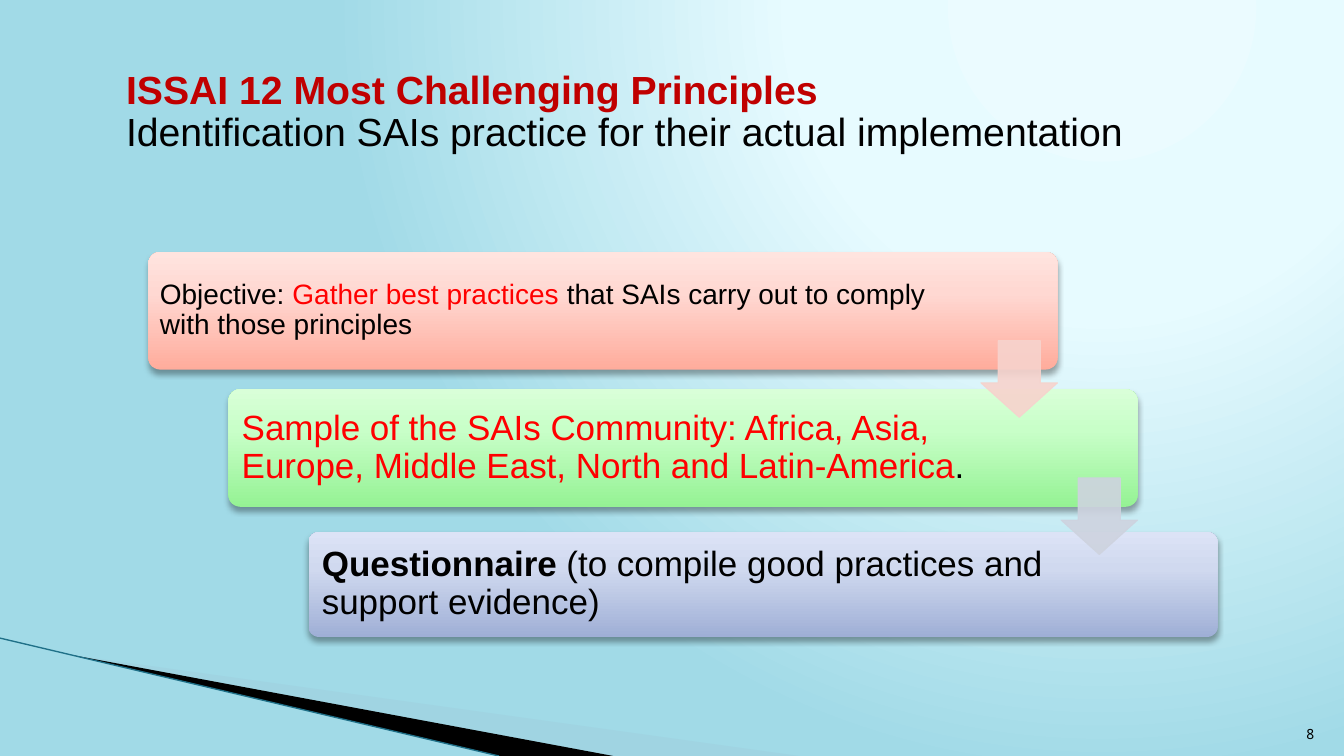
"""Build the slide on the most challenging ISSAI 12 principles."""
from dataclasses import dataclass
from typing import Optional

import pptx
import pptx.dml.color
import pptx.enum.shapes
import pptx.enum.text
import pptx.oxml
import pptx.oxml.ns
import pptx.util

Pt = pptx.util.Pt
Anchor = pptx.enum.text.MSO_ANCHOR
Align = pptx.enum.text.PP_ALIGN
Preset = pptx.enum.shapes.MSO_SHAPE


@dataclass(frozen=True)
class Theme:
    font: str = "Arial"
    number_font: str = "Noto Sans Mono"
    title_size: float = 28
    objective_size: float = 20
    step_size: float = 25
    number_size: float = 10
    ink: str = "000000"
    heading: str = "C00000"
    accent: str = "FF0000"
    swoosh: str = "A0CBDC"
    swoosh_edge: str = "1F7088"
    background: tuple = ((0, "EBFBFF"), (40, "E7FBFF"), (100, "A1DAE7"))
    coral: tuple = ((0, "FFAC9C"), (65, "FFD8D2"), (100, "FFE4DF"))
    green: tuple = ((0, "95F294"), (65, "C8FFC8"), (100, "D9FFD8"))
    blue: tuple = ((0, "9FAFD6"), (65, "D0D9EF"), (100, "DCE3F6"))
    coral_arrow: str = "F7D3CD"
    blue_arrow: str = "CED3DF"


THEME = Theme()


@dataclass(frozen=True)
class Span:
    text: str
    color: str = THEME.ink
    bold: bool = False


@dataclass(frozen=True)
class Step:
    spans: tuple
    gradient: tuple
    top: float
    height: float
    text_width: float
    size: float = THEME.step_size
    inset: float = 7.2
    arrow: Optional[str] = None


@dataclass(frozen=True)
class Swoosh:
    points: tuple
    color: str
    opacity: int = 100


STEPS = (
    Step((Span("Objective: "), Span("Gather best practices ", THEME.accent),
          Span("that SAIs carry out to comply with those principles")),
         THEME.coral, 180, 84, 558.7, THEME.objective_size, 5.8, THEME.coral_arrow),
    Step((Span("Sample of the SAIs Community: Africa, Asia, Europe, Middle East, "
               "North and Latin-America", THEME.accent), Span(".")),
         THEME.green, 278, 84, 532.8, arrow=THEME.blue_arrow),
    Step((Span("Questionnaire ", bold=True),
          Span("(to compile good practices and support evidence)")),
         THEME.blue, 380, 75, 533.5),
)
SWOOSHES = (
    Swoosh(((52.5, 468.4), (571, 540), (438, 540)), THEME.swoosh, 40),
    Swoosh(((51.5, 467.6), (438.5, 540), (357, 540)), THEME.ink),
)
STEP_LEFT, STEP_SHIFT, STEP_WIDTH = 106, 57.2, 649.4
TEXT_MARGIN = 2.4
ARROW_DROP, ARROW_SIZE = 63.4, 54.7
LINEAR_UP = '<a:lin ang="16200000" scaled="0"/>'
FROM_TOP_RIGHT = '<a:path path="circle"><a:fillToRect l="65000" t="0" r="0" b="98000"/></a:path>'
SHADOW = ('<a:outerShdw {} blurRad="50800" dist="38100" dir="5400000" rotWithShape="0">'
          '<a:srgbClr val="000000"><a:alpha val="35000"/></a:srgbClr></a:outerShdw>')


def rgb(color: str) -> pptx.dml.color.RGBColor:
    return pptx.dml.color.RGBColor.from_string(color)


def apply_gradient(properties, stops: tuple, direction: str) -> None:
    colors = "".join(f'<a:gs pos="{position * 1000}"><a:srgbClr val="{color}"/></a:gs>'
                     for position, color in stops)
    gradient = pptx.oxml.parse_xml(
        f'<a:gradFill {pptx.oxml.ns.nsdecls("a")} rotWithShape="1">'
        f'<a:gsLst>{colors}</a:gsLst>{direction}</a:gradFill>')
    solid = properties.find(pptx.oxml.ns.qn("a:solidFill"))
    properties.replace(solid, gradient)


def apply_solid(fill, color: str) -> None:
    fill.solid()
    fill.fore_color.rgb = rgb(color)


def apply_opacity(shape, percent: int) -> None:
    for color in shape.element.spPr.iter(pptx.oxml.ns.qn("a:srgbClr")):
        color.append(pptx.oxml.parse_xml(
            f'<a:alpha {pptx.oxml.ns.nsdecls("a")} val="{percent * 1000}"/>'))


def add_text(slide, spans: tuple, *, left: float, top: float, width: float, height: float,
             size: float, font: str = THEME.font, inset: tuple = (7.2, 3.6),
             anchor=Anchor.MIDDLE, align=Align.LEFT, line_spacing: float = 0.9) -> None:
    box = slide.shapes.add_textbox(Pt(left), Pt(top), Pt(width), Pt(height))
    frame = box.text_frame
    frame.word_wrap = True
    frame.vertical_anchor = anchor
    frame.margin_left = frame.margin_right = Pt(inset[0])
    frame.margin_top = frame.margin_bottom = Pt(inset[1])
    paragraph = frame.paragraphs[0]
    paragraph.alignment = align
    paragraph.line_spacing = line_spacing
    for index, span in enumerate(spans):
        run = paragraph.add_run()
        run.text = span.text.rstrip("\n")
        run.font.name = font
        run.font.size = Pt(size)
        run.font.bold = span.bold
        run.font.color.rgb = rgb(span.color)
        if span.text.endswith("\n"):
            paragraph.add_line_break()


def add_swoosh(slide, swoosh: Swoosh) -> None:
    start, *rest = swoosh.points
    builder = slide.shapes.build_freeform(*start, scale=Pt(1))
    builder.add_line_segments(rest, close=True)
    shape = builder.convert_to_shape()
    shape.shadow.inherit = False
    apply_solid(shape.fill, swoosh.color)
    shape.line.fill.background()
    apply_opacity(shape, swoosh.opacity)


def add_swoosh_edge(slide) -> None:
    edge = slide.shapes.add_connector(
        pptx.enum.shapes.MSO_CONNECTOR.STRAIGHT, Pt(0), Pt(455.8), Pt(356.4), Pt(540))
    edge.line.color.rgb = rgb(THEME.swoosh_edge)
    edge.line.width = Pt(0.95)
    edge.element.spPr.append(
        pptx.oxml.parse_xml(f'<a:effectLst {pptx.oxml.ns.nsdecls("a")}/>'))


def add_step(slide, step: Step, left: float) -> None:
    bar = slide.shapes.add_shape(Preset.ROUNDED_RECTANGLE, Pt(left), Pt(step.top),
                                 Pt(STEP_WIDTH), Pt(step.height))
    bar.adjustments[0] = 0.1
    bar.shadow.inherit = False
    bar.fill.solid()
    apply_gradient(bar.element.spPr, step.gradient, LINEAR_UP)
    bar.line.fill.background()
    effects = bar.element.spPr.find(pptx.oxml.ns.qn("a:effectLst"))
    effects.append(pptx.oxml.parse_xml(SHADOW.format(pptx.oxml.ns.nsdecls("a"))))
    add_text(slide, step.spans, left=left + TEXT_MARGIN, top=step.top + TEXT_MARGIN,
             width=step.text_width, height=step.height - 2 * TEXT_MARGIN,
             size=step.size, inset=(step.inset, step.inset))


def add_arrow(slide, color: str, left: float, top: float) -> None:
    arrow = slide.shapes.add_shape(Preset.DOWN_ARROW, Pt(left), Pt(top),
                                   Pt(ARROW_SIZE), Pt(ARROW_SIZE))
    arrow.adjustments[0], arrow.adjustments[1] = 0.55, 0.45
    arrow.shadow.inherit = False
    apply_solid(arrow.fill, color)
    apply_solid(arrow.line.fill, color)
    arrow.line.width = Pt(0.75)
    apply_opacity(arrow, 90)


def main() -> None:
    deck = pptx.Presentation()
    deck.slide_width, deck.slide_height = Pt(960), Pt(540)
    slide = deck.slides.add_slide(deck.slide_layouts[6])
    slide.background.fill.solid()
    background = next(slide.element.iter(pptx.oxml.ns.qn("p:bgPr")))
    apply_gradient(background, THEME.background, FROM_TOP_RIGHT)
    for swoosh in SWOOSHES:
        add_swoosh(slide, swoosh)
    add_swoosh_edge(slide)
    add_text(slide, (Span("8"),), left=908, top=505, width=38, height=28.6,
             size=THEME.number_size, font=THEME.number_font, anchor=Anchor.BOTTOM,
             align=Align.RIGHT, line_spacing=1.0)
    add_text(slide, (Span("ISSAI 12 Most Challenging Principles\n", THEME.heading, True),
                     Span("Identification SAIs practice for their actual implementation")),
             left=83, top=47.5, width=823.7, height=66.2, size=THEME.title_size)
    lefts = [STEP_LEFT + STEP_SHIFT * index for index in range(len(STEPS))]
    for step, left in zip(STEPS, lefts):
        add_step(slide, step, left)
    for step, left in zip(STEPS, lefts):
        if step.arrow:
            add_arrow(slide, step.arrow, left + STEP_WIDTH - ARROW_SIZE, step.top + ARROW_DROP)
    deck.save("out.pptx")


if __name__ == "__main__":
    main()
